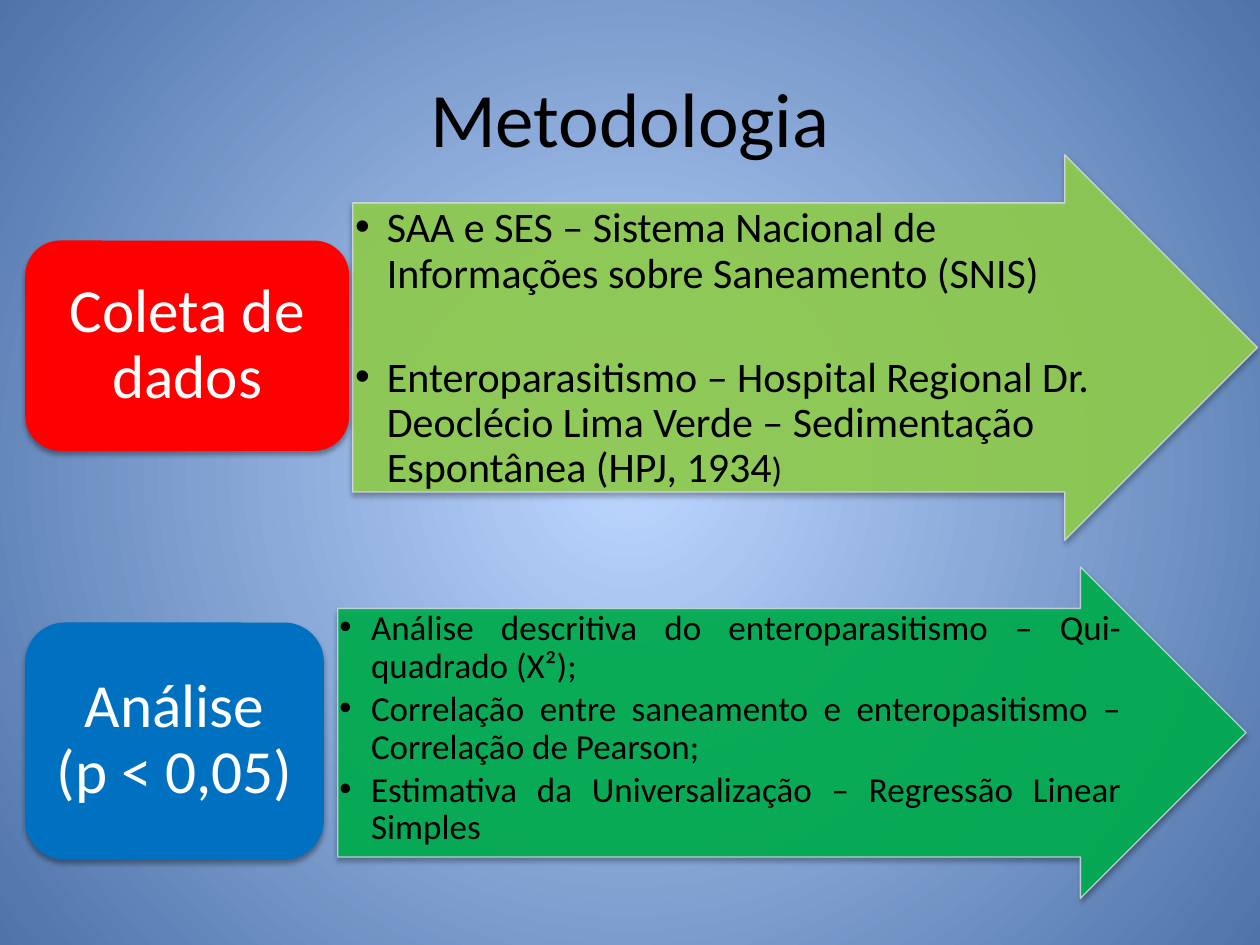
"""Build the "Metodologia" slide: two labelled arrows with lists."""
import pptx
import pptx.dml.color
import pptx.enum.shapes
import pptx.enum.text
import pptx.oxml
import pptx.oxml.ns
import pptx.util

Cm = pptx.util.Cm
Pt = pptx.util.Pt
ALIGN = pptx.enum.text.PP_ALIGN
ANCHOR = pptx.enum.text.MSO_ANCHOR
SHAPE = pptx.enum.shapes.MSO_SHAPE
qn = pptx.oxml.ns.qn
NAMESPACE = pptx.oxml.ns.nsdecls("a")


def color(hex_value):
    """Turn a hex string into a colour."""
    return pptx.dml.color.RGBColor.from_string(hex_value)


def add_block(kind, box, fill):
    """Add a filled preset shape with a soft shadow below it."""
    shape = slide.shapes.add_shape(kind, *[Cm(length) for length in box])
    shape.fill.solid()
    shape.fill.fore_color.rgb = color(fill)
    shape.line.fill.background()
    shape.element.spPr.append(pptx.oxml.parse_xml(
        f'<a:effectLst {NAMESPACE}><a:outerShdw blurRad="{Pt(3.1)}" dist="{Pt(1.8)}" '
        'dir="5400000" rotWithShape="0"><a:srgbClr val="000000">'
        '<a:alpha val="35000"/></a:srgbClr></a:outerShdw></a:effectLst>'))
    return shape


presentation = pptx.Presentation()
presentation.slide_width, presentation.slide_height = Cm(25.4), Cm(19.05)
slide = presentation.slides.add_slide(presentation.slide_layouts[3])

background = slide.background.fill
background.gradient()
for stop, hex_value in zip(background.gradient_stops, ("BCD6FF", "4F74AA")):
    stop.color.rgb = color(hex_value)
linear = next(slide.element.iter(qn("a:lin")))
linear.getparent().replace(linear, pptx.oxml.parse_xml(
    f'<a:path {NAMESPACE} path="circle">'
    '<a:fillToRect l="50000" t="50000" r="50000" b="50000"/></a:path>'))

title, *lists = slide.placeholders
title.left, title.top, title.width, title.height = Cm(1.27), Cm(0.76), Cm(22.86), Cm(3.18)
title.text_frame.text = "Metodologia"
title.text_frame.vertical_anchor = ANCHOR.MIDDLE
title_paragraph = title.text_frame.paragraphs[0]
title_paragraph.alignment = ALIGN.CENTER
title_font = title_paragraph.runs[0].font
title_font.name, title_font.size = "Calibri", Pt(44)
title_font.color.rgb = color("000000")

steps = [
    {"label": "Coleta de dados", "label_box": (0.51, 4.85, 6.53, 4.24), "label_fill": "FF0000",
     "arrow_box": (7.11, 3.12, 18.24, 7.77), "arrow_fill": "92D050", "line": "D8DBE2",
     "list_box": (7.11, 4.11, 15.32, 5.84), "inset": 0.05, "size": 24, "gap": 30,
     "align": ALIGN.LEFT,
     "items": [["SAA e SES – Sistema Nacional de Informações sobre Saneamento (SNIS)"],
               ["Enteroparasitismo – Hospital Regional Dr. Deoclécio Lima Verde – "
                "Sedimentação Espontânea (HPJ, 1934", ")"]]},
    {"label": "Análise (p < 0,05)", "label_box": (0.51, 12.55, 6.02, 4.78), "label_fill": "0070C0",
     "arrow_box": (6.81, 11.43, 18.31, 6.68), "arrow_fill": "00B050", "line": "CFD3E3",
     "list_box": (6.81, 12.27, 15.82, 5), "inset": 0.03, "size": 20, "gap": 0,
     "align": ALIGN.JUSTIFY,
     "items": [["Análise descritiva do enteroparasitismo – Qui-quadrado (X²);"],
               ["Correlação entre saneamento e enteropasitismo – Correlação de Pearson;"],
               ["Estimativa da Universalização – Regressão Linear Simples"]]},
]

for step, body in zip(steps, lists):
    arrow = add_block(SHAPE.RIGHT_ARROW, step["arrow_box"], step["arrow_fill"])
    arrow.adjustments[0], arrow.adjustments[1] = 0.75, 0.5
    arrow.line.color.rgb = color(step["line"])
    arrow.line.width = Pt(0.75)
    for paint in arrow.element.spPr.findall(".//" + qn("a:solidFill")):
        paint[0].append(pptx.oxml.parse_xml(f'<a:alpha {NAMESPACE} val="90000"/>'))

    slide.shapes.element.append(body.element)
    body.left, body.top, body.width, body.height = [Cm(length) for length in step["list_box"]]
    frame = body.text_frame
    frame.auto_size = pptx.enum.text.MSO_AUTO_SIZE.NONE
    frame.vertical_anchor = ANCHOR.TOP
    frame.margin_left = frame.margin_right = Cm(step["inset"])
    frame.margin_top = frame.margin_bottom = Cm(step["inset"])
    frame.text = "\n".join(parts[0] for parts in step["items"])
    for index, (paragraph, parts) in enumerate(zip(frame.paragraphs, step["items"])):
        for part in parts[1:]:
            paragraph.add_run().text = part
        paragraph.alignment = step["align"]
        paragraph.line_spacing = 0.9
        paragraph.space_before = Pt(step["gap"] if index else 0)
        paragraph.space_after = Pt(step["size"] * 0.15)
        properties = paragraph._p.get_or_add_pPr()
        properties.set("marL", str(Cm(0.64)))
        properties.set("indent", str(-Cm(0.64)))
        for position, run in enumerate(paragraph.runs):
            run.font.name = "Calibri"
            run.font.size = Pt(20 if position else step["size"])
            run.font.color.rgb = color("000000")

    label = add_block(SHAPE.ROUNDED_RECTANGLE, step["label_box"], step["label_fill"])
    frame = label.text_frame
    frame.word_wrap = True
    frame.vertical_anchor = ANCHOR.MIDDLE
    frame.margin_left = frame.margin_right = Cm(0.39)
    frame.margin_top = frame.margin_bottom = Cm(0.18)
    frame.text = step["label"]
    paragraph = frame.paragraphs[0]
    paragraph.alignment = ALIGN.CENTER
    paragraph.line_spacing = 0.9
    font = paragraph.runs[0].font
    font.name, font.size = "Calibri", Pt(35)
    font.color.rgb = color("FFFFFF")

for placeholder in list(slide.placeholders):
    if not placeholder.text_frame.text:
        placeholder.element.getparent().remove(placeholder.element)

presentation.save("out.pptx")
